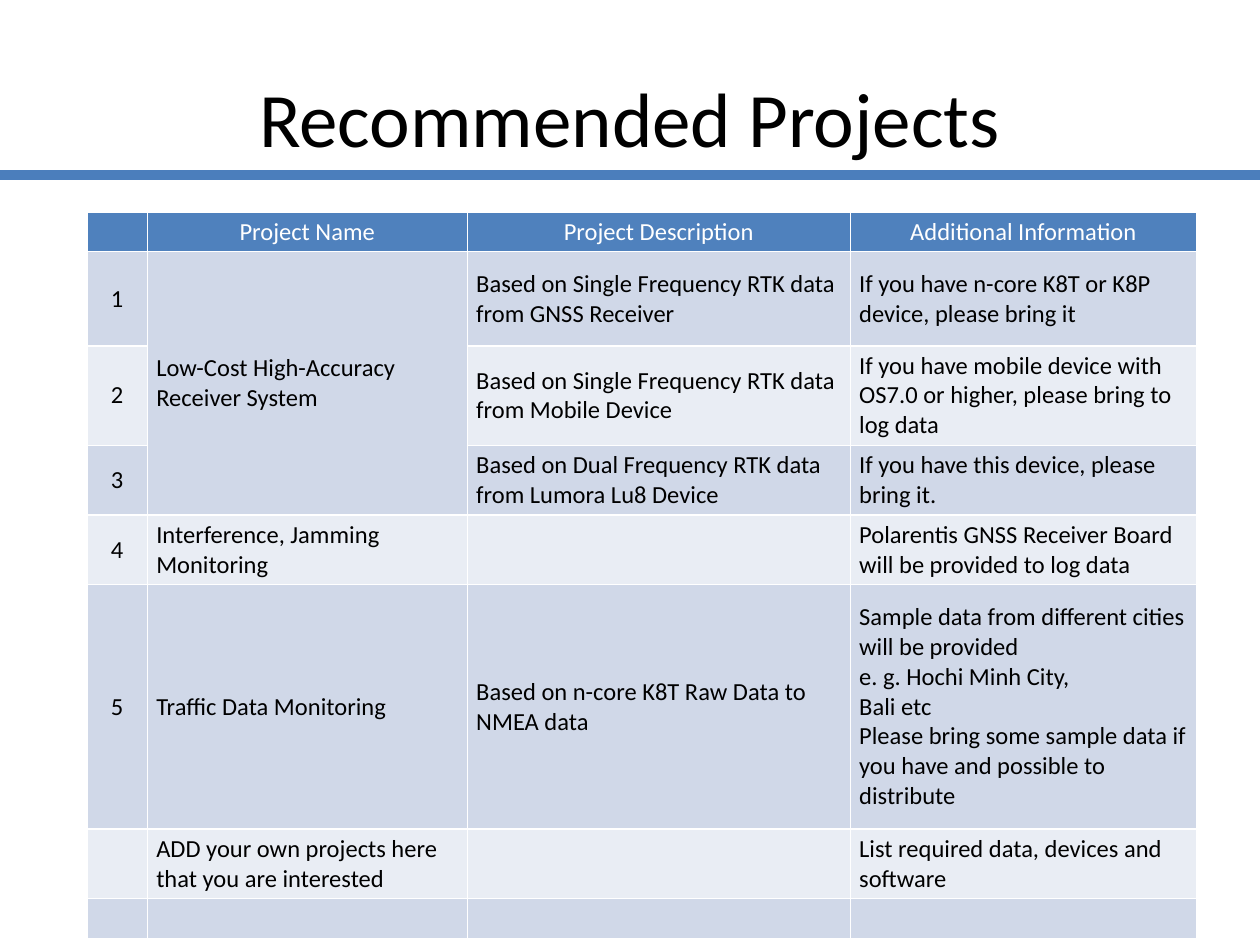
"""Build the Recommended Projects slide with its project table."""
from lxml import etree
from pptx import Presentation
from pptx import util as u
from pptx.dml.color import RGBColor
from pptx.enum import shapes, text
from pptx.oxml import ns

BLACK = RGBColor(0x00, 0x00, 0x00)
WHITE = RGBColor(0xFF, 0xFF, 0xFF)
RULE_BLUE = RGBColor(0x4B, 0x7E, 0xBC)
HEADER_BLUE = RGBColor(0x4F, 0x81, 0xBD)
BANDS = (RGBColor(0xE9, 0xED, 0xF4), RGBColor(0xD0, 0xD8, 0xE8))

TITLE = "Recommended Projects"
PROJECTS = [
    ("", "Project Name", "Project Description", "Additional Information"),
    ("1", "Low-Cost High-Accuracy Receiver System",
     "Based on Single Frequency RTK data from GNSS Receiver",
     "If you have n-core K8T or K8P device, please bring it"),
    ("2", "", "Based on Single Frequency RTK data from Mobile Device",
     "If you have mobile device with OS7.0 or higher, please bring to log data"),
    ("3", "", "Based on Dual Frequency RTK data from Lumora Lu8 Device",
     "If you have this device, please bring it."),
    ("4", "Interference, Jamming Monitoring", "",
     "Polarentis GNSS Receiver Board will be provided to log data"),
    ("5", "Traffic Data Monitoring",
     "Based on n-core K8T Raw Data to NMEA data",
     "Sample data from different cities will be provided\n"
     "e. g. Hochi Minh City,\nBali etc\n"
     "Please bring some sample data if you have and possible to distribute"),
    ("", "ADD your own projects here that you are interested", "",
     "List required data, devices and software"),
    ("", "", "", ""),
]
COLUMN_WIDTHS = (1.22, 6.45, 7.72, 6.98)
ROW_HEIGHTS = (0.78, 1.9, 1.99, 1.39, 1.39, 4.93, 1.39, 0.78)
CELL_FORMAT = {
    "margin_left": u.Cm(0.18), "margin_right": u.Cm(0.18),
    "margin_top": u.Cm(0.1), "margin_bottom": u.Cm(0.1),
    "vertical_anchor": text.MSO_ANCHOR.MIDDLE,
}
TITLE_FONT = {"name": "Calibri", "size": u.Pt(44)}
CELL_FONT = {"name": "Calibri", "size": u.Pt(14), "bold": False}


def apply(target, values):
    for key, value in values.items():
        setattr(target, key, value)


def style_runs(paragraph, font, colour):
    for run in paragraph.runs:
        apply(run.font, font)
        run.font.color.rgb = colour


def add_title(slide):
    title = slide.shapes.title
    apply(title, {"left": u.Cm(1.27), "top": u.Cm(0.76),
                  "width": u.Cm(22.86), "height": u.Cm(3.18)})
    frame = title.text_frame
    frame.text = TITLE
    frame.vertical_anchor = text.MSO_ANCHOR.MIDDLE
    frame.paragraphs[0].alignment = text.PP_ALIGN.CENTER
    style_runs(frame.paragraphs[0], TITLE_FONT, BLACK)


def add_rule(slide, width):
    rule = slide.shapes.add_connector(
        shapes.MSO_CONNECTOR.STRAIGHT, 0, u.Cm(3.53), width, u.Cm(3.53))
    rule.line.color.rgb = RULE_BLUE
    rule.line.width = u.Pt(6)
    etree.SubElement(rule._element.spPr, ns.qn("a:effectLst"))


def fill_cell(cell, wording, row, column):
    apply(cell, CELL_FORMAT)
    cell.fill.solid()
    cell.fill.fore_color.rgb = BANDS[row % 2] if row else HEADER_BLUE
    cell.text_frame.text = wording
    centred = row == 0 or column == 0
    for paragraph in cell.text_frame.paragraphs:
        paragraph.alignment = text.PP_ALIGN.CENTER if centred else text.PP_ALIGN.LEFT
        style_runs(paragraph, CELL_FONT, BLACK if row else WHITE)
        if not wording:
            end = etree.SubElement(paragraph._p, ns.qn("a:endParaRPr"))
            end.set("sz", "1400")


def add_projects(slide):
    projects = slide.shapes.add_table(
        len(PROJECTS), len(COLUMN_WIDTHS), u.Cm(1.75), u.Cm(4.27),
        u.Cm(sum(COLUMN_WIDTHS)), u.Cm(sum(ROW_HEIGHTS))).table
    for column, width in zip(projects.columns, COLUMN_WIDTHS):
        column.width = u.Cm(width)
    for row, height in zip(projects.rows, ROW_HEIGHTS):
        row.height = u.Cm(height)
    for row, entries in enumerate(PROJECTS):
        for column, wording in enumerate(entries):
            fill_cell(projects.cell(row, column), wording, row, column)
    projects.cell(1, 1).merge(projects.cell(3, 1))


def main():
    deck = Presentation()
    deck.slide_width, deck.slide_height = u.Cm(25.4), u.Cm(19.05)
    slide = deck.slides.add_slide(deck.slide_layouts[5])
    add_rule(slide, deck.slide_width)
    add_title(slide)
    add_projects(slide)
    deck.save("out.pptx")


if __name__ == "__main__":
    main()
